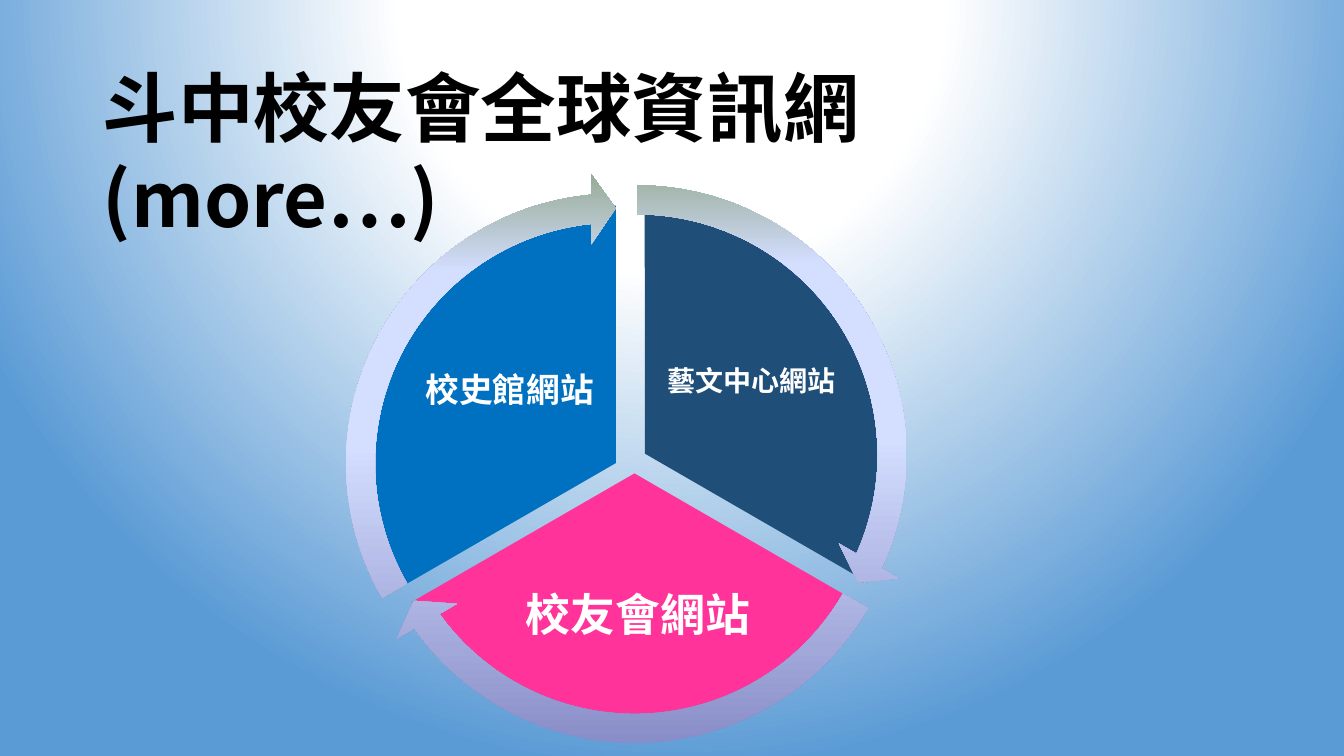
from dataclasses import dataclass

from lxml.etree import SubElement
from pptx import Presentation
from pptx.dml.color import RGBColor
from pptx.enum.shapes import MSO_SHAPE
from pptx.enum.text import MSO_ANCHOR, MSO_AUTO_SIZE, PP_ALIGN
from pptx.oxml.ns import qn
from pptx.util import Cm, Pt

FONT = "Noto Sans CJK SC"
PIE_SIZE = 12.98
ARROW_SIZE = 14.61
BACKGROUND_STOPS = [(0, "FFFFFF"), (35, "FFFFFF"), (100, "5B9BD5")]
ARROW_STOPS = [(0, "8488C4"), (53, "D4DEFF"), (83, "D4DEFF"), (100, "96AB94")]


@dataclass
class Sector:
    text: str
    size: int
    color: str
    pie_at: tuple[float, float]
    pie_angles: tuple[float, float]
    label_box: tuple[float, float, float, float]
    arrow_at: tuple[float, float]
    arrow_angles: tuple[float, float]


# Angles are in units of 100000/60000 of a degree, as preset shapes store them
SECTORS = [
    Sector("藝文中心網站", 20, "1F4E79", (9.76, 4.94), (162, 18),
           (16.61, 7.71, 4.65, 3.86), (8.75, 4.16), (14.73, 161.99)),
    Sector("校友會網站", 32, "FF3399", (9.5, 5.44), (18, 90),
           (12.6, 13.84, 6.96, 3.4), (8.69, 4.62), (86.72, 18.01)),
    Sector("校史館網站", 24, "0070C0", (9.03, 5.18), (90, 162),
           (10.52, 7.93, 4.65, 3.86), (8.21, 4.37), (158.73, 90)),
]


def rgb(color: str) -> RGBColor:
    return RGBColor.from_string(color)


def add_gradient(parent, stops: list[tuple[int, str]]):
    """Append a gradient fill with its stops and return it for a direction."""
    gradient = SubElement(parent, qn("a:gradFill"), rotWithShape="1")
    stop_list = SubElement(gradient, qn("a:gsLst"))
    for position, color in stops:
        stop = SubElement(stop_list, qn("a:gs"), pos=str(position * 1000))
        SubElement(stop, qn("a:srgbClr"), val=color)
    return gradient


def set_background(slide) -> None:
    slide.background.fill.solid()
    properties = slide.background.fill._xPr
    properties.remove(properties.find(qn("a:solidFill")))
    gradient = add_gradient(properties, BACKGROUND_STOPS)
    properties.insert(0, gradient)
    circle = SubElement(gradient, qn("a:path"))
    circle.set("path", "circle")
    SubElement(circle, qn("a:fillToRect"),
               l="50000", t="-80000", r="50000", b="180000")


def write_text(shape, text: str, *, size: int, color: str,
               align: PP_ALIGN = PP_ALIGN.CENTER,
               anchor: MSO_ANCHOR = MSO_ANCHOR.MIDDLE,
               side_margin: float = 0.08, top_margin: float = 0.08,
               line_spacing: float = 0.9) -> None:
    frame = shape.text_frame
    frame.word_wrap = True
    frame.auto_size = MSO_AUTO_SIZE.NONE
    frame.vertical_anchor = anchor
    frame.margin_left = frame.margin_right = Cm(side_margin)
    frame.margin_top = frame.margin_bottom = Cm(top_margin)
    paragraph = frame.paragraphs[0]
    paragraph.alignment = align
    paragraph.line_spacing = line_spacing
    run = paragraph.add_run()
    run.text = text
    run.font.size = Pt(size)
    run.font.bold = True
    run.font.name = FONT
    run.font.color.rgb = rgb(color)
    SubElement(run.font._element, qn("a:ea"), typeface=FONT)


def add_round_shape(slide, preset: MSO_SHAPE, at: tuple[float, float],
                    size: float, adjustments: tuple[float, ...]):
    shape = slide.shapes.add_shape(preset, *map(Cm, (*at, size, size)))
    shape.shadow.inherit = False
    shape.line.fill.background()
    for index, value in enumerate(adjustments):
        shape.adjustments[index] = value
    return shape


def add_sector(slide, sector: Sector) -> None:
    pie = add_round_shape(slide, MSO_SHAPE.PIE, sector.pie_at, PIE_SIZE,
                          sector.pie_angles)
    pie.fill.solid()
    pie.fill.fore_color.rgb = rgb(sector.color)
    label = slide.shapes.add_textbox(*map(Cm, sector.label_box))
    write_text(label, sector.text, size=sector.size, color="FFFFFF")


def add_arrow(slide, sector: Sector) -> None:
    arrow = add_round_shape(slide, MSO_SHAPE.CIRCULAR_ARROW, sector.arrow_at,
                            ARROW_SIZE, (0.05, 3.28, *sector.arrow_angles, 0.06))
    properties = arrow._element.spPr
    gradient = add_gradient(properties, ARROW_STOPS)
    SubElement(gradient, qn("a:lin"), ang=str(270 * 60000), scaled="0")
    properties.find(qn("a:prstGeom")).addnext(gradient)


def main() -> None:
    presentation = Presentation()
    presentation.slide_width = Cm(33.87)
    presentation.slide_height = Cm(19.05)
    slide = presentation.slides.add_slide(presentation.slide_layouts[5])
    set_background(slide)

    # Title
    title = slide.shapes.title
    title.left, title.top, title.width, title.height = map(
        Cm, (2.34, 1.4, 26, 2.57))
    write_text(title, "斗中校友會全球資訊網(more…)", size=54, color="000000",
               align=PP_ALIGN.LEFT, anchor=MSO_ANCHOR.TOP,
               side_margin=0.25, top_margin=0.13, line_spacing=1.0)

    # Cycle: sectors first, arrows over them
    for sector in SECTORS:
        add_sector(slide, sector)
    for sector in SECTORS:
        add_arrow(slide, sector)

    presentation.save("out.pptx")


if __name__ == "__main__":
    main()
